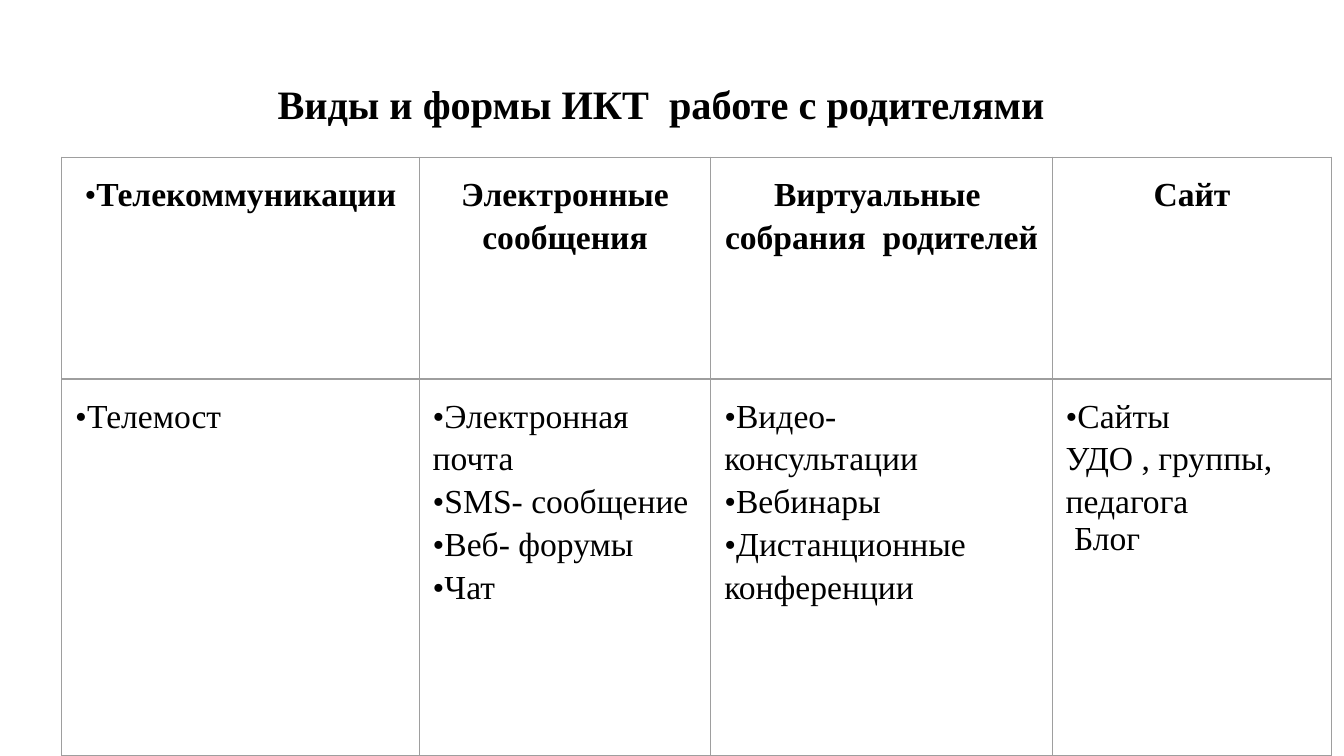
from lxml.etree import SubElement
from pptx import Presentation
from pptx.dml.color import RGBColor
from pptx.enum.text import MSO_ANCHOR, PP_ALIGN
from pptx.oxml import parse_xml
from pptx.oxml.ns import nsdecls, qn
from pptx.util import Inches, Pt

TITLE = "Виды и формы ИКТ  работе с родителями"
HEADERS = [
    "•Телекоммуникации",
    "Электронные сообщения",
    "Виртуальные  собрания  родителей",
    "Сайт",
]
FORMS = [
    ["•Телемост"],
    ["•Электронная почта", "•SMS- сообщение", "•Веб- форумы", "•Чат"],
    ["•Видео-", "консультации", "•Вебинары", "•Дистанционные конференции"],
    ["•Сайты", "УДО , группы, педагога", " Блог"],
]
COLUMN_WIDTHS = [2.66, 2.17, 2.54, 2.08]
ROW_HEIGHTS = [1.65, 2.8]


def color(value):
    return RGBColor.from_string(value)


class SlideBuilder:
    """Holds the style and the current slide, and adds elements to it."""

    font_name = "Times New Roman"
    text_color = "000000"
    border_color = "9E9E9E"
    inset = 0.1

    def __init__(self, slide):
        self.slide = slide
        slide.background.fill.solid()
        slide.background.fill.fore_color.rgb = color("FFFFFF")

    def style(self, paragraph, size, bold, alignment, spacing=None):
        paragraph.alignment = alignment
        if spacing:
            paragraph.line_spacing = spacing
        font = paragraph.font
        font.name, font.size, font.bold = self.font_name, Pt(size), bold
        font.color.rgb = color(self.text_color)

    def set_insets(self, target):
        target.margin_left = target.margin_right = Inches(self.inset)
        target.margin_top = target.margin_bottom = Inches(self.inset)

    def title(self, text, left, top, width, height):
        box = self.slide.shapes.add_textbox(
            Inches(left), Inches(top), Inches(width), Inches(height)
        )
        frame = box.text_frame
        frame.word_wrap = True
        frame.vertical_anchor = MSO_ANCHOR.TOP
        self.set_insets(frame)
        paragraph = frame.paragraphs[0]
        paragraph.text = text
        self.style(paragraph, 21.6, True, PP_ALIGN.CENTER)

    def borders(self, cell):
        properties = cell._tc.get_or_add_tcPr()
        for position, side in enumerate(("lnL", "lnR", "lnT", "lnB")):
            line = parse_xml(f'<a:{side} {nsdecls("a")} w="{Pt(0.75)}"/>')
            fill = SubElement(line, qn("a:solidFill"))
            SubElement(fill, qn("a:srgbClr"), val=self.border_color)
            properties.insert(position, line)

    def cell(self, cell, lines, header):
        cell.fill.background()
        self.borders(cell)
        self.set_insets(cell)
        frame = cell.text_frame
        for index, line in enumerate(lines):
            paragraph = frame.paragraphs[0] if index == 0 else frame.add_paragraph()
            if header and line.startswith("•"):
                bullet = paragraph.add_run()
                bullet.text = "•"
                bullet.font.bold = False
                line = line[1:]
            paragraph.add_run().text = line
            self.style(
                paragraph,
                18,
                header,
                PP_ALIGN.CENTER if header else PP_ALIGN.LEFT,
                None if line.startswith(" ") else 1.15,
            )

    def table(self, rows, left, top, widths, heights):
        table = self.slide.shapes.add_table(
            len(rows), len(widths), Inches(left), Inches(top),
            Inches(sum(widths)), Inches(sum(heights)),
        ).table
        table.first_row = table.horz_banding = False
        for column, width in zip(table.columns, widths):
            column.width = Inches(width)
        for row, height in zip(table.rows, heights):
            row.height = Inches(height)
        for row_index, row in enumerate(rows):
            for column_index, lines in enumerate(row):
                self.cell(table.cell(row_index, column_index), lines, row_index == 0)


def main():
    presentation = Presentation()
    presentation.slide_width = Inches(10)
    presentation.slide_height = Inches(10 * 9 / 16)
    slide = presentation.slides.add_slide(presentation.slide_layouts[6])
    builder = SlideBuilder(slide)
    builder.title(TITLE, 0.26, 0.49, 9.32, 0.63)
    header_row = [[header] for header in HEADERS]
    builder.table([header_row, FORMS], 0.46, 1.17, COLUMN_WIDTHS, ROW_HEIGHTS)
    presentation.save("out.pptx")


if __name__ == "__main__":
    main()
